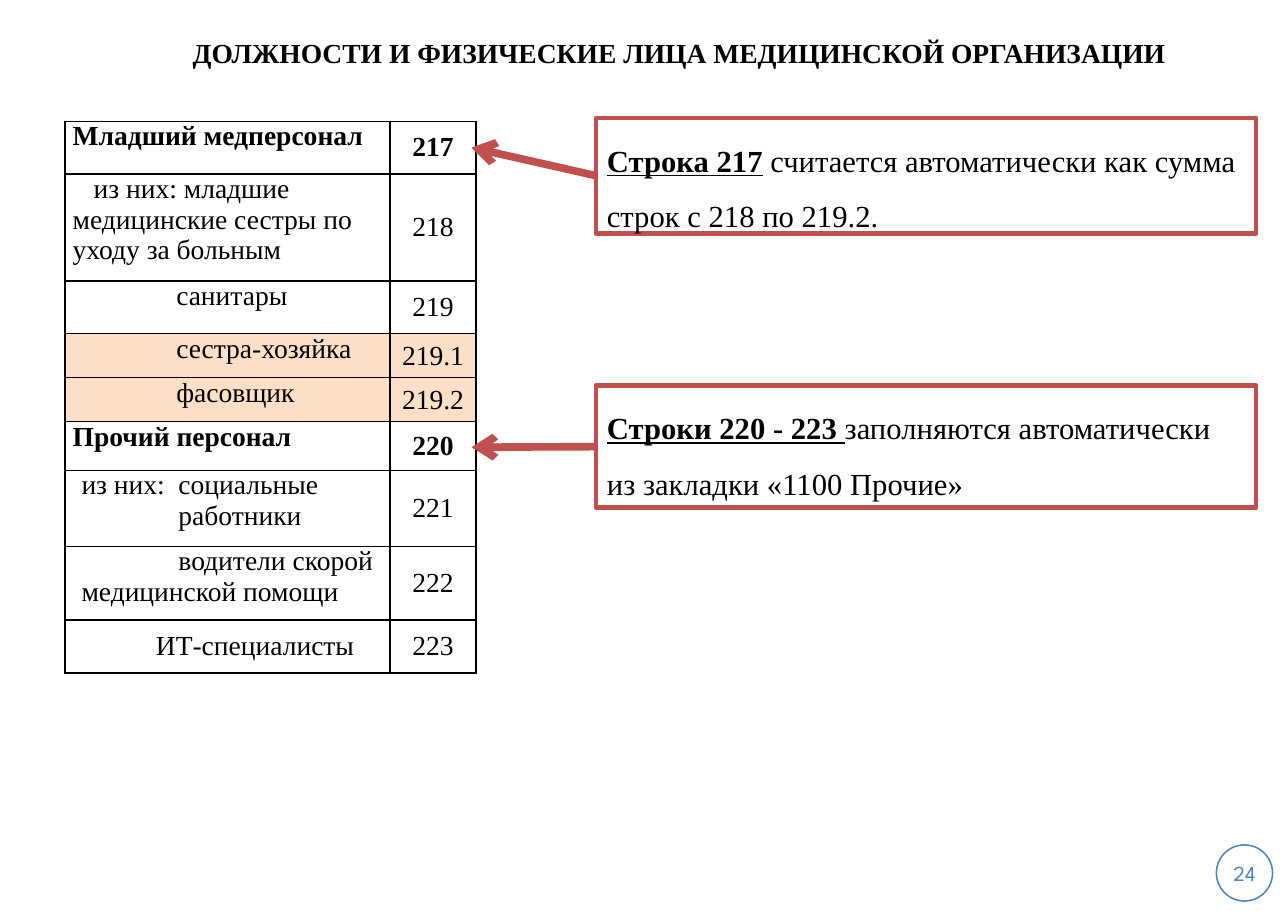
from dataclasses import dataclass

from lxml import etree
from pptx import Presentation
from pptx import util as u
from pptx.dml.color import RGBColor
from pptx.enum import shapes, text
from pptx.oxml import ns

PX = 9144
BLACK = RGBColor(0x00, 0x00, 0x00)
WHITE = RGBColor(0xFF, 0xFF, 0xFF)
RED = RGBColor(0xC0, 0x50, 0x4D)
BLUE = RGBColor(0x4F, 0x81, 0xBD)
PEACH = RGBColor(0xFA, 0xC0, 0x90)
SERIF = "Times New Roman"
MID = text.MSO_ANCHOR.MIDDLE
TOP = text.MSO_ANCHOR.TOP
MAIN = text.PP_ALIGN.CENTER


@dataclass
class Line:
    """A paragraph of a row label, with its left margin and first indent."""
    words: str
    left: int = 0
    first: int = 0


@dataclass
class Row:
    """A table row."""
    code: str
    height: int
    lines: list[Line]
    bold: bool = False
    tint: bool = False
    mid: bool = False


@dataclass
class Note:
    """A framed remark whose arrow points at the table."""
    head: str
    body: str
    top: int
    height: int
    aim: int


ROWS = [
    Row("217", 48, [Line("Младший медперсонал")], bold=True),
    Row("218", 97, [Line("из них: младшие медицинcкие сестры по уходу за больным", 0, 19)]),
    Row("219", 48, [Line("санитары", 0, 94)]),
    Row("219.1", 40, [Line("сестра-хозяйка", 0, 94)], tint=True),
    Row("219.2", 40, [Line("фасовщик", 0, 94)], tint=True),
    Row("220", 44, [Line("Прочий персонал")], bold=True),
    Row("221", 69, [Line("из них:\tсоциальные", 96, -88), Line("работники", 96)]),
    Row("222", 67, [Line("водители скорой медицинской помощи", 8, 88)]),
    Row("223", 48, [Line("ИТ-специалисты", 50)], mid=True),
]
NOTES = [
    Note("Строка 217", " считается автоматически как сумма строк с 218 по 219.2.", 107, 105, 134),
    Note("Строки 220 - 223 ", "заполняются автоматически из закладки «1100 Прочие»", 350, 111, 406),
]


def px(*nums: int) -> list[int]:
    """Turn px into EMU."""
    return [n * PX for n in nums]


def style(run, size: int, bold: bool = False, name: str = SERIF, tone: RGBColor = BLACK) -> None:
    """Format one run."""
    font = run.font
    font.size, font.bold, font.name = u.Pt(size), bold, name
    font.color.rgb = tone


def inset(frame, left: int, top: int, right: int, bottom: int) -> None:
    """Set the margins of a frame or a cell."""
    frame.margin_left, frame.margin_top, frame.margin_right, frame.margin_bottom = px(
        left, top, right, bottom)


def edge(cell) -> None:
    """Draw thin black borders round a cell."""
    props = cell._tc.get_or_add_tcPr()
    for side in ("lnL", "lnR", "lnT", "lnB"):
        line = etree.SubElement(props, ns.qn("a:" + side), w=str(u.Pt(1)))
        fill = etree.SubElement(line, ns.qn("a:solidFill"))
        etree.SubElement(fill, ns.qn("a:srgbClr"), val=str(BLACK))


def paint(cell, row: Row) -> None:
    """Fill a cell, half clear if tinted."""
    cell.fill.solid()
    cell.fill.fore_color.rgb = PEACH if row.tint else WHITE
    if row.tint:
        for tone in cell._tc.tcPr.findall(ns.qn("a:solidFill") + "/" + ns.qn("a:srgbClr")):
            etree.SubElement(tone, ns.qn("a:alpha"), val="50000")


def write(cell, row: Row, lines: list[Line], mid: bool) -> None:
    """Write the lines of one cell."""
    edge(cell)
    paint(cell, row)
    inset(cell, 7, 0, 7, 0)
    cell.vertical_anchor = MID if mid else TOP
    cell.text_frame.text = "\n".join(line.words for line in lines)
    for para, line in zip(cell.text_frame.paragraphs, lines):
        props = para._p.get_or_add_pPr()
        props.set("marL", str(line.left * PX))
        props.set("indent", str(line.first * PX))
        if mid:
            para.alignment = MAIN
        for run in para.runs:
            style(run, 18, row.bold)


def grid(slide) -> None:
    """Add the table of staff lines."""
    high = sum(row.height for row in ROWS)
    table = slide.shapes.add_table(len(ROWS), 2, *px(59, 110, 373, high)).table
    table.first_row = table.horz_banding = False
    for col, wide in zip(table.columns, px(295, 78)):
        col.width = wide
    for i, row in enumerate(ROWS):
        table.rows[i].height = row.height * PX
        write(table.cell(i, 0), row, row.lines, row.mid)
        write(table.cell(i, 1), row, [Line(row.code)], True)


def shape(slide, kind, box: list[int], tone: RGBColor, width: int):
    """Add a white outlined shape."""
    item = slide.shapes.add_shape(kind, *box)
    item.shadow.inherit = False
    item.fill.solid()
    item.fill.fore_color.rgb = WHITE
    item.line.color.rgb = tone
    item.line.width = u.Pt(width)
    return item


def remark(slide, note: Note) -> None:
    """Add a remark and its arrow."""
    box = shape(slide, shapes.MSO_SHAPE.RECTANGLE, px(541, note.top, 599, note.height), RED, 3)
    frame = box.text_frame
    frame.word_wrap, frame.vertical_anchor = True, TOP
    para = frame.paragraphs[0]
    para.alignment, para.line_spacing = text.PP_ALIGN.LEFT, 1.5
    for words, head in ((note.head, True), (note.body, False)):
        run = para.add_run()
        run.text = words
        style(run, 20, head)
        run.font.underline = head
    mid = note.top + note.height // 2
    arrow = slide.shapes.add_connector(shapes.MSO_CONNECTOR.STRAIGHT, *px(541, mid, 428, note.aim))
    arrow.begin_connect(box, 1)
    arrow.line.color.rgb = RED
    arrow.line.width = u.Pt(5)
    etree.SubElement(arrow.line._get_or_add_ln(), ns.qn("a:tailEnd"), type="arrow")
    etree.SubElement(arrow._element.spPr, ns.qn("a:effectLst"))


def label(item, words: str) -> None:
    """Put one centred line into a shape."""
    frame = item.text_frame
    frame.text = words
    frame.word_wrap, frame.vertical_anchor = True, MID
    frame.paragraphs[0].alignment = MAIN


def main() -> None:
    """Build the slide."""
    deck = Presentation()
    deck.slide_width, deck.slide_height = px(1169, 827)
    slide = deck.slides.add_slide(deck.slide_layouts[6])
    badge = shape(slide, shapes.MSO_SHAPE.OVAL, px(1104, 767, 51, 51), BLUE, 1)
    label(badge, "24")
    inset(badge.text_frame, 0, 0, 0, 0)
    style(badge.text_frame.paragraphs[0].runs[0], 14, False, "League Spartan", BLUE)
    title = slide.shapes.add_textbox(*px(73, 0, 1097, 95))
    label(title, "ДОЛЖНОСТИ И ФИЗИЧЕСКИЕ ЛИЦА МЕДИЦИНСКОЙ ОРГАНИЗАЦИИ")
    inset(title.text_frame, 0, 5, 10, 5)
    style(title.text_frame.paragraphs[0].runs[0], 18, True)
    grid(slide)
    for note in NOTES:
        remark(slide, note)
    deck.save("out.pptx")


if __name__ == "__main__":
    main()
